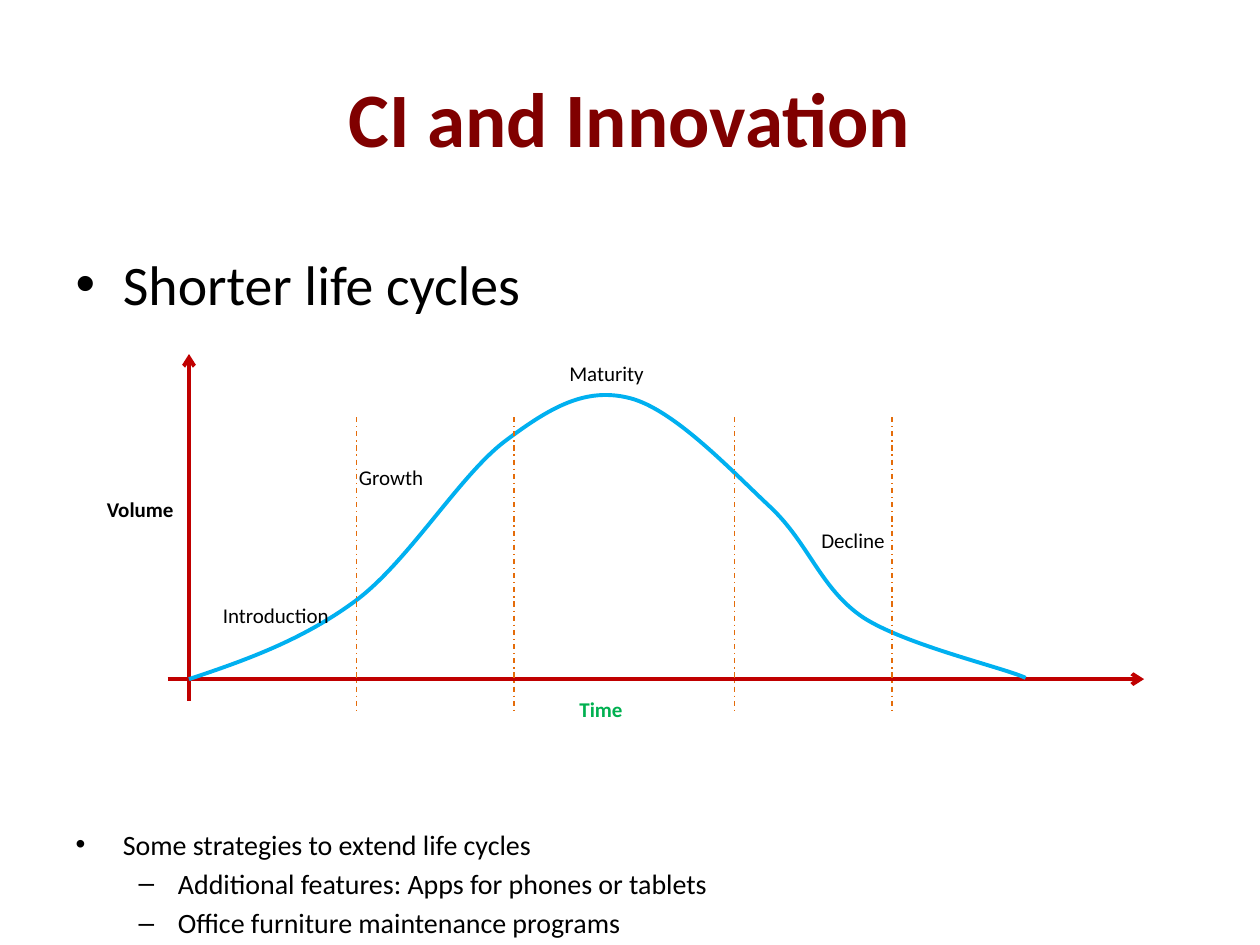
from dataclasses import dataclass

from lxml import etree
from pptx import Presentation
from pptx.dml.color import RGBColor
from pptx.enum.dml import MSO_LINE
from pptx.enum.shapes import MSO_CONNECTOR
from pptx.enum.text import MSO_ANCHOR, MSO_AUTO_SIZE, PP_ALIGN
from pptx.oxml.ns import qn
from pptx.util import Inches, Pt

STRAIGHT = MSO_CONNECTOR.STRAIGHT
DASH_DOT = MSO_LINE.DASH_DOT
MIDDLE = MSO_ANCHOR.MIDDLE
CENTER = PP_ALIGN.CENTER
NO_FIT = MSO_AUTO_SIZE.NONE
GROW = MSO_AUTO_SIZE.SHAPE_TO_FIT_TEXT


@dataclass(frozen=True)
class Theme:
    """Hold the colours, font and sizes of the slide."""
    font: str = "Calibri"
    title: str = "800000"
    text: str = "000000"
    axis: str = "C00000"
    curve: str = "00B0F0"
    split: str = "E46C0A"
    time: str = "00B050"
    title_size: float = 44
    lead_size: float = 31.9
    list_size: float = 16
    label_size: float = 12
    thick: float = 2.25
    thin: float = 0.75


THEME = Theme()

BULLETS = [
    ("Shorter life cycles", 0, THEME.lead_size, 0),
    ("Some strategies to extend life cycles", 0, THEME.list_size, 292),
    ("Additional features: Apps for phones or tablets", 1, THEME.list_size, 3.2),
    ("Office furniture maintenance programs", 1, THEME.list_size, 3.2),
]

STAGES = [
    ("Introduction", 1.67, 4.73, 1.05),
    ("Growth", 2.75, 3.64, 0.72),
    ("Maturity", 4.42, 2.81, 0.8),
    ("Decline", 6.42, 4.14, 0.71),
]

CURVE = [
    (1.5, 5.39),
    (1.95, 5.24), (2.4, 5.08), (2.82, 4.77),
    (3.24, 4.46), (3.65, 3.77), (4.01, 3.5),
    (4.37, 3.23), (4.65, 3.07), (5, 3.16),
    (5.35, 3.25), (5.8, 3.73), (6.11, 4.02),
    (6.42, 4.31), (6.51, 4.67), (6.85, 4.9),
    (7.19, 5.12), (7.97, 5.3), (8.14, 5.38),
]


def place(shape, left, top, width, height):
    """Move and size a shape, in inches."""
    shape.left, shape.top = Inches(left), Inches(top)
    shape.width, shape.height = Inches(width), Inches(height)


def style(par, size, color=THEME.text, bold=False):
    """Format the runs of a paragraph."""
    for run in par.runs:
        font = run.font
        font.name, font.size, font.bold = THEME.font, Pt(size), bold
        font.color.rgb = RGBColor.from_string(color)


def ink(line, color, width):
    """Set the colour and width of a line."""
    line.color.rgb = RGBColor.from_string(color)
    line.width = Pt(width)


def add_title(slide, text):
    """Fill the title placeholder."""
    title = slide.shapes.title
    place(title, 0.5, 0.3, 9, 1.25)
    frame = title.text_frame
    frame.text = text
    frame.vertical_anchor = MIDDLE
    frame.paragraphs[0].alignment = CENTER
    style(frame.paragraphs[0], THEME.title_size, THEME.title, True)


def add_list(slide, items):
    """Fill the body placeholder with bullets around the graph."""
    body = slide.placeholders[1]
    place(body, 0.5, 1.93, 9, 4.83)
    frame = body.text_frame
    frame.auto_size = NO_FIT
    frame.text = "\n".join(item[0] for item in items)
    for par, (_, level, size, gap) in zip(frame.paragraphs, items):
        par.level = level
        par.space_before = Pt(gap)
        style(par, size)


def add_line(slide, start, end, color, width):
    """Draw a straight line without a shadow."""
    ends = [Inches(value) for value in (*start, *end)]
    line = slide.shapes.add_connector(STRAIGHT, *ends)
    ink(line.line, color, width)
    etree.SubElement(line._element.spPr, qn("a:effectLst"))
    return line


def add_axis(slide, start, end):
    """Draw an axis with an arrowhead at its end."""
    axis = add_line(slide, start, end, THEME.axis, THEME.thick)
    stroke = axis._element.spPr.find(qn("a:ln"))
    etree.SubElement(stroke, qn("a:tailEnd"), type="arrow")


def add_split(slide, left):
    """Draw a dashed border between two stages."""
    split = add_line(slide, (left, 3.31), (left, 5.64), THEME.split, THEME.thin)
    split.line.dash_style = DASH_DOT


def add_curve(slide, points):
    """Draw a start point and triples of points as one Bezier curve."""
    spots = [(Inches(x), Inches(y)) for x, y in points]
    form = slide.shapes.build_freeform(*spots[0])
    form.add_line_segments(spots[1:], close=False)
    curve = form.convert_to_shape()
    curve.shadow.inherit = False
    curve.fill.background()
    ink(curve.line, THEME.curve, THEME.thick)
    route = next(curve._element.iter(qn("a:path")))
    steps = route.findall(qn("a:lnTo"))
    for first in range(0, len(steps), 3):
        bend = etree.SubElement(route, qn("a:cubicBezTo"))
        for step in steps[first:first + 3]:
            bend.append(step[0])
            route.remove(step)


def add_label(slide, text, left, top, width, color=THEME.text, bold=False):
    """Write a small label on the graph."""
    box = slide.shapes.add_textbox(
        Inches(left), Inches(top), Inches(width), Inches(0.3))
    frame = box.text_frame
    frame.word_wrap = False
    frame.auto_size = GROW
    frame.text = text
    style(frame.paragraphs[0], THEME.label_size, color, bold)


def main():
    """Build and save the slide."""
    deck = Presentation()
    deck.slide_width, deck.slide_height = Inches(10), Inches(7.5)
    slide = deck.slides.add_slide(deck.slide_layouts[1])
    add_title(slide, "CI and Innovation")
    add_list(slide, BULLETS)
    add_axis(slide, (1.5, 5.56), (1.5, 2.81))
    add_axis(slide, (1.33, 5.39), (9.08, 5.39))
    add_curve(slide, CURVE)
    for stage in STAGES:
        add_label(slide, *stage)
    for left in (2.83, 4.08, 5.83, 7.08):
        add_split(slide, left)
    add_label(slide, "Time", 4.5, 5.48, 0.55, THEME.time, True)
    add_label(slide, "Volume", 0.75, 3.89, 0.74, bold=True)
    deck.save("out.pptx")


if __name__ == "__main__":
    main()
